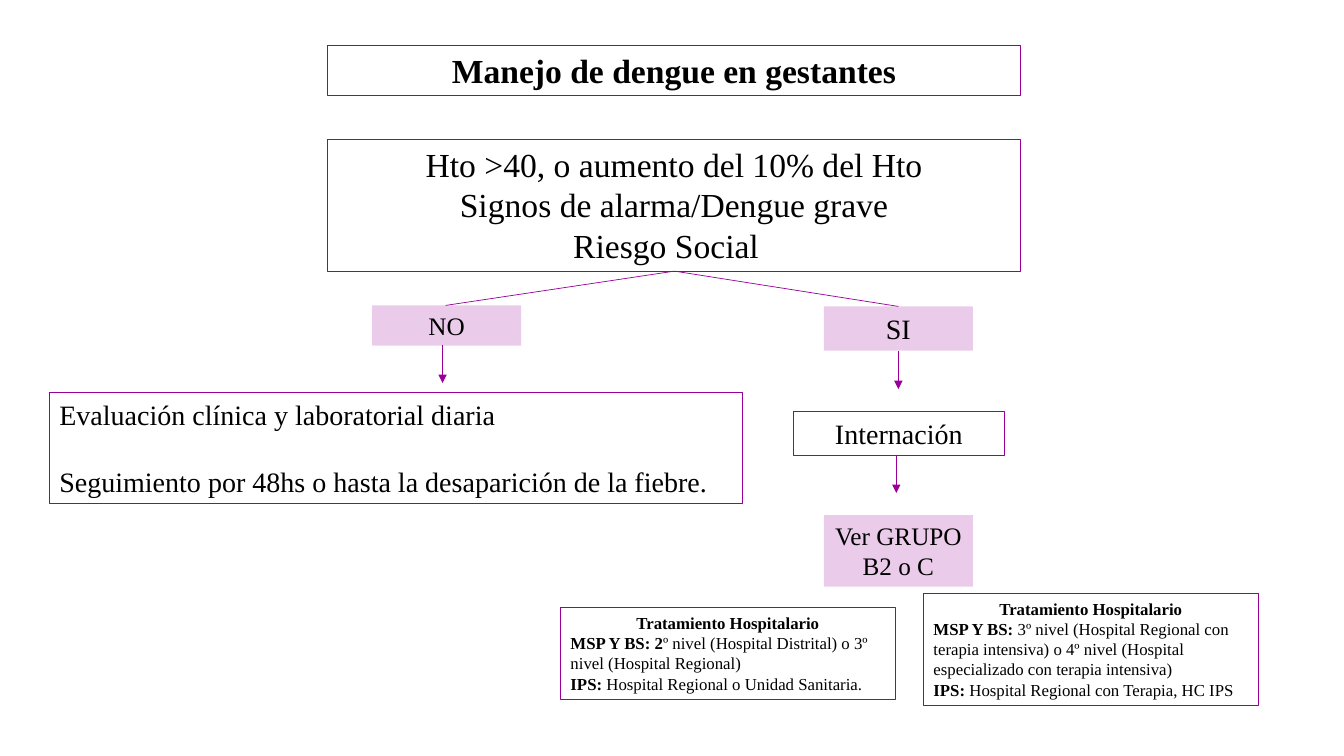
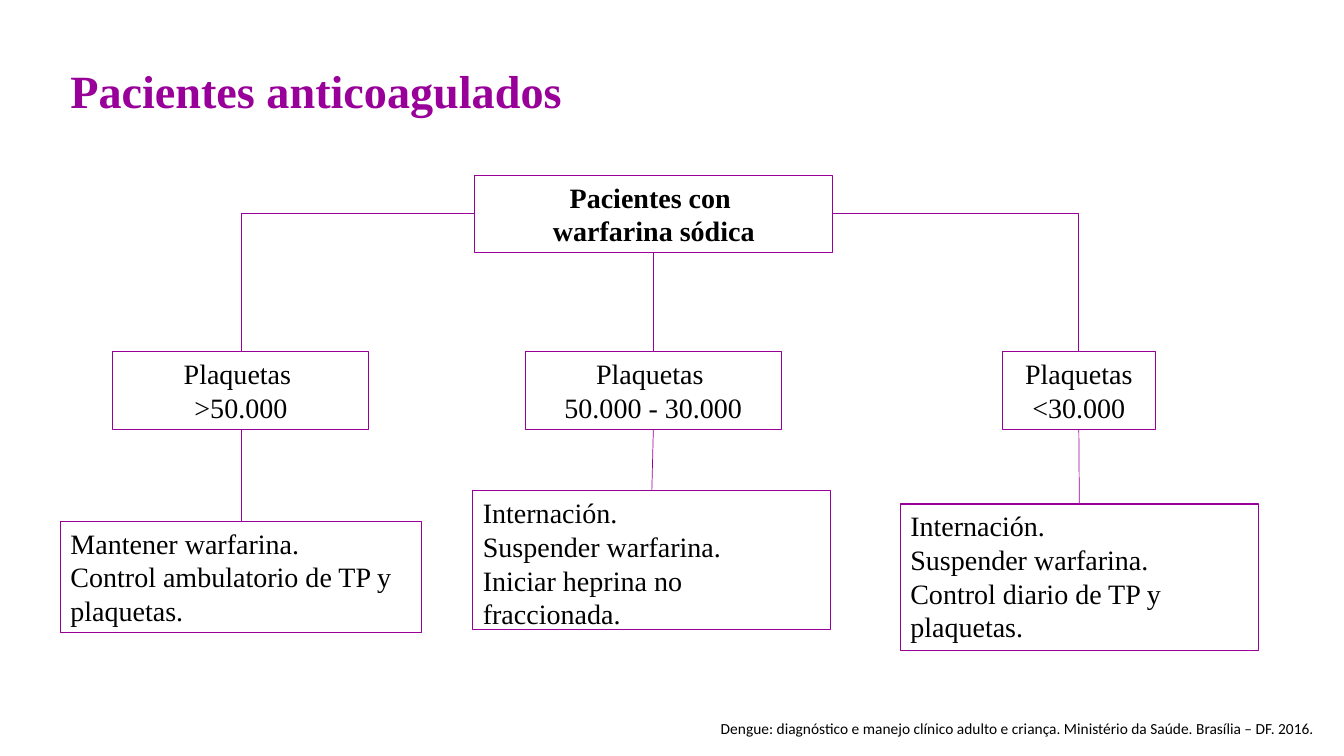
from lxml import etree
from pptx import Presentation
from pptx.dml.color import RGBColor
from pptx.enum import shapes, text
from pptx.oxml.ns import qn
from pptx.util import Inches, Pt

PURPLE = "990099"
BLACK = "000000"
SERIF = "Times New Roman"
LEFT = text.PP_ALIGN.LEFT
CENTER = text.PP_ALIGN.CENTER


def color(hex_value):
    return RGBColor.from_string(hex_value)


class FlowDeck:
    """Draws flowchart slides that share one style."""

    def __init__(self):
        self.deck = Presentation()
        self.deck.slide_width = Inches(13.33)
        self.deck.slide_height = Inches(7.5)
        self.slide = None

    def new_slide(self):
        self.slide = self.deck.slides.add_slide(self.deck.slide_layouts[6])

    def fill_text(self, frame, paragraphs, size, align=LEFT, bold=False, font=SERIF, ink=BLACK, gap=0):
        frame.word_wrap = True
        frame.vertical_anchor = text.MSO_ANCHOR.TOP
        for index, content in enumerate(paragraphs):
            paragraph = frame.add_paragraph() if index else frame.paragraphs[0]
            paragraph.alignment = align
            if index and gap:
                paragraph.space_before = Pt(gap)
            runs = [(content, bold)] if isinstance(content, str) else content
            for words, is_bold in runs:
                run = paragraph.add_run()
                run.text = words
                run.font.name = font
                run.font.size = Pt(size)
                run.font.bold = is_bold
                run.font.color.rgb = color(ink)

    def rectangle(self, area):
        shape = self.slide.shapes.add_shape(shapes.MSO_SHAPE.RECTANGLE, *map(Inches, area))
        shape.shadow.inherit = False
        return shape

    def box(self, area, paragraphs, size=20, **style):
        outlined = self.rectangle(area)
        outlined.fill.background()
        outlined.line.color.rgb = color(PURPLE)
        outlined.line.width = Pt(0.75)
        self.fill_text(outlined.text_frame, paragraphs, size, **style)
        return outlined

    def tag(self, area, label, size):
        tinted = self.rectangle(area)
        tinted.fill.solid()
        tinted.fill.fore_color.rgb = color(PURPLE)
        tint = next(tinted._element.spPr.iter(qn("a:srgbClr")))
        etree.SubElement(tint, qn("a:alpha")).set("val", "20000")
        tinted.line.fill.background()
        self.fill_text(tinted.text_frame, [label], size, CENTER)

    def treatment(self, area, levels, hospitals):
        heading = self.box(area, ["Tratamiento Hospitalario", levels, [("IPS: ", True), (hospitals, False)]],
                           size=12, bold=True)
        heading.text_frame.paragraphs[0].alignment = CENTER

    def link(self, start, end, arrow=False, bent=False):
        kind = shapes.MSO_CONNECTOR.ELBOW if bent else shapes.MSO_CONNECTOR.STRAIGHT
        connector = self.slide.shapes.add_connector(kind, *map(Inches, (*start, *end)))
        connector.line.color.rgb = color(PURPLE)
        connector.line.width = Pt(0.5)
        properties = connector._element.spPr
        if bent:
            properties.find(qn("a:prstGeom")).set("prst", "bentConnector2")
        if arrow:
            etree.SubElement(properties.find(qn("a:ln")), qn("a:tailEnd")).set("type", "triangle")
        etree.SubElement(properties, qn("a:effectLst"))

    def label(self, area, words, size, anchor=text.MSO_ANCHOR.TOP, spacing=1.0, **style):
        frame = self.slide.shapes.add_textbox(*map(Inches, area)).text_frame
        self.fill_text(frame, [words], size, **style)
        frame.vertical_anchor = anchor
        frame.paragraphs[0].line_spacing = spacing

    def title(self, words):
        self.label((0.6, 0.37, 11.5, 1.11), words, 33, text.MSO_ANCHOR.MIDDLE, 0.9, bold=True, ink=PURPLE)

    def source(self, words):
        self.label((7.05, 7.08, 6.28, 0.29), words, 11, font="Calibri")


def pregnancy_slide(flow):
    flow.new_slide()
    flow.box((3.25, 0.45, 6.87, 0.5), ["Manejo de dengue en gestantes"], 24, align=CENTER, bold=True)
    flow.box((3.25, 1.38, 6.87, 1.31),
             ["Hto >40, o aumento del 10% del Hto", "Signos de alarma/Dengue grave", "Riesgo Social\t"],
             24, align=CENTER)

    flow.tag((8.17, 3.04, 1.48, 0.44), "SI", 20)
    flow.tag((3.69, 3.03, 1.48, 0.4), "NO", 18)
    flow.tag((8.17, 5.11, 1.48, 0.71), "Ver GRUPO B2 o C", 18)
    flow.box((7.87, 4.08, 2.09, 0.44), ["Internación"], align=CENTER)
    flow.box((0.49, 3.89, 6.87, 1.11),
             ["Evaluación clínica y laboratorial diaria",
              "Seguimiento por 48hs o hasta la desaparición de la fiebre."], gap=24)

    for answer in ((4.42, 3.03), (8.91, 3.04)):
        flow.link((6.69, 2.69), answer)
    for x, y in ((8.91, 3.48), (8.89, 4.51), (4.39, 3.42)):
        flow.link((x, y), (x, y + 0.38), arrow=True)

    flow.treatment((9.16, 5.89, 3.32, 1.11),
                   [("MSP Y BS: ", True),
                    ("3º nivel (Hospital Regional con terapia intensiva) o 4º nivel "
                     "(Hospital especializado con terapia intensiva)", False)],
                   "Hospital Regional con Terapia, HC IPS")
    flow.treatment((5.56, 6.03, 3.32, 0.91),
                   [("MSP Y BS: 2", True),
                    ("º nivel (Hospital Distrital) o 3º nivel (Hospital Regional)", False)],
                   "Hospital Regional o Unidad Sanitaria.")


def anticoagulated_slide(flow):
    flow.new_slide()
    flow.title("Pacientes anticoagulados")
    flow.box((4.71, 1.74, 3.55, 0.77), ["Pacientes con ", "warfarina sódica"], align=CENTER, bold=True)

    count_top, count_height = 3.49, 0.77
    branches = [
        (2.39, 2.54, ["Plaquetas ", ">50.000"], (0.6, 5.17, 3.58, 1.11),
         ["Mantener warfarina.", "Control ambulatorio de TP y plaquetas."]),
        (6.48, 2.54, ["Plaquetas ", "50.000 - 30.000"], (4.69, 4.87, 3.55, 1.38),
         ["Internación.", "Suspender warfarina.", "Iniciar heprina no fraccionada."]),
        (10.7, 1.52, ["Plaquetas", "<30.000"], (8.93, 5, 3.55, 1.45),
         ["Internación.", "Suspender warfarina.", "Control diario de TP y plaquetas."]),
    ]
    for center, width, count, area, conduct in branches:
        flow.box((center - width / 2, count_top, width, count_height), count, align=CENTER)
        flow.box(area, conduct)
        conduct_center = area[0] + area[2] / 2
        flow.link((center, count_top + count_height), (conduct_center, area[1]))

    flow.link((6.48, 2.51), (6.48, count_top))
    for side, center in ((4.71, 2.39), (8.25, 10.7)):
        flow.link((side, 2.12), (center, count_top), bent=True)
    flow.source("Dengue: diagnóstico e manejo clínico adulto e criança. "
                "Ministério da Saúde. Brasília – DF. 2016.")


def main():
    flow = FlowDeck()
    pregnancy_slide(flow)
    anticoagulated_slide(flow)
    flow.deck.save("out.pptx")


if __name__ == "__main__":
    main()
